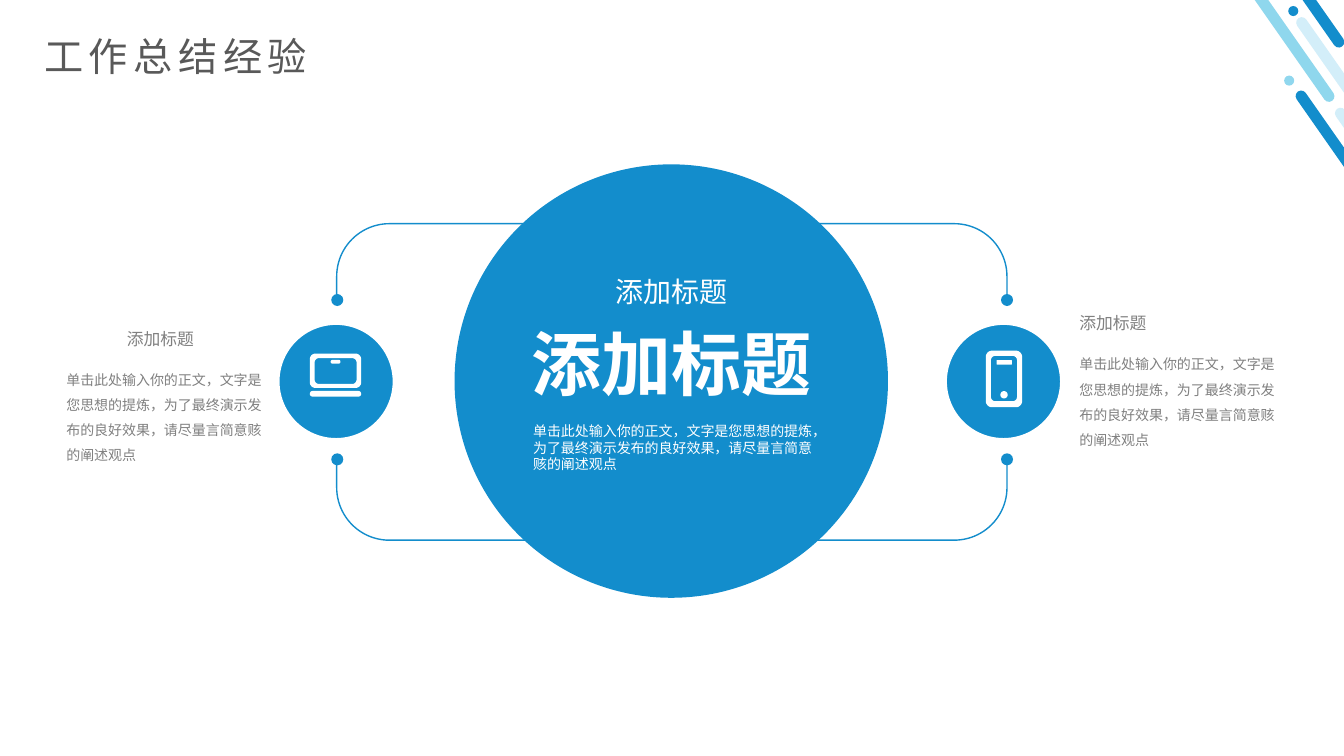
import math
import pptx
import pptx.util
import pptx.dml.color
import pptx.enum.shapes
import pptx.enum.text

Pt = pptx.util.Pt
KIND = pptx.enum.shapes.MSO_SHAPE
ALIGN = pptx.enum.text.PP_ALIGN
FIT = pptx.enum.text.MSO_AUTO_SIZE

FONT = "Noto Sans CJK SC"
BLUE, SKY, PALE, WHITE = "138DCC", "90D7EE", "D3EEF9", "FFFFFF"
DARK, GRAY = "595959", "808080"

HEAD = "添加标题"
BODY = "单击此处输入你的正文，文字是您思想的提炼，为了最终演示发布的良好效果，请尽量言简意赅的阐述观点"

BARS = [
    (968.4, 51.1, 157.7, BLUE),
    (996.5, 63.4, 157.7, PALE),
    (890.6, -108.7, 198.7, "8FD7ED"),
    (980.6, -5, 198.7, PALE),
    (909.4, -110.2, 157.7, BLUE),
]
SPOTS = [(917.3, 54, SKY), (920.2, 4.3, BLUE)]

HUB = (324.7, 117.4, 309.6, 309.6)
FRAME = (240.5, 159.8, 478.8, 226.1)
BADGES = [192.2, 668.9]
DOTS = [(x, y) for x in (236.6, 715) for y in (210, 323.8)]

TEXTS = [
    ("工作总结经验", (24.5, 19.4, 937.4, 41), dict(size=28, color=DARK, gap=4)),
    (BODY, (40.3, 255.6, 161.3, 55.4), dict(lead=1.5, grow=False)),
    (HEAD, (83.5, 231.1, 113, 21.8), dict(size=12)),
    (BODY, (763.9, 244.6, 161.3, 55.4), dict(lead=1.5, grow=False)),
    (HEAD, (763.9, 219.9, 113, 21.8), dict(size=12)),
    (HEAD, (368.6, 192.2, 222.5, 31.5),
     dict(size=20, color=WHITE, align=ALIGN.CENTER)),
    (HEAD, (368.6, 225.4, 222.5, 67.5),
     dict(size=50, color=WHITE, align=ALIGN.CENTER, bold=True)),
    (BODY, (373.7, 298.1, 214.6, 55.4), dict(color=WHITE, grow=False)),
]

LAPTOP = [
    (221.3, 252.6, 36.7, 24.5, 4),
    (224.7, 255.8, 30, 18.5, 3.2),
    (221.3, 279.3, 36.7, 4, 2),
    (236.2, 257, 7, 2.8, 1.4),
]
PHONE = [
    (704.2, 250.5, 25.9, 40.4, 4.4),
    (707.8, 254.2, 18.7, 32.4, 3.2),
    (711.9, 257.2, 10.9, 3.3, 0.4),
    (714.6, 279.4, 5.2, 5.2, 2.6),
]

deck = pptx.Presentation()
deck.slide_width, deck.slide_height = Pt(960), Pt(540)
page = deck.slides.add_slide(deck.slide_layouts[6])


def tint(code):
    return pptx.dml.color.RGBColor.from_string(code)


def paint(part, fill=None, line=None, width=1):
    part.shadow.inherit = False
    if fill:
        part.fill.solid()
        part.fill.fore_color.rgb = tint(fill)
    else:
        part.fill.background()
    if line:
        part.line.color.rgb = tint(line)
        part.line.width = Pt(width)
    else:
        part.line.fill.background()


def shape(kind, box, **look):
    part = page.shapes.add_shape(kind, *map(Pt, box))
    paint(part, **look)
    return part


def write(text, box, size=10, color=GRAY, bold=False, align=ALIGN.LEFT,
          lead=None, gap=0, grow=True):
    frame = page.shapes.add_textbox(*map(Pt, box)).text_frame
    frame.word_wrap = True
    frame.auto_size = FIT.SHAPE_TO_FIT_TEXT if grow else FIT.NONE
    para = frame.paragraphs[0]
    para.alignment = align
    if lead:
        para.line_spacing = lead
    run = para.add_run()
    run.text = text
    font = run.font
    font.name, font.size, font.bold = FONT, Pt(size), bold
    font.color.rgb = tint(color)
    props = run._r.get_or_add_rPr()
    if gap:
        props.set("spc", str(gap * 100))
    east = props.makeelement(pptx.oxml.ns.qn("a:ea"), {"typeface": FONT})
    props.find(pptx.oxml.ns.qn("a:latin")).addnext(east)


def outline(left, top, wide, high, curve, steps=8):
    spots = []
    for turn in range(4):
        x = left + (wide - curve if turn in (0, 3) else curve)
        y = top + (high - curve if turn in (0, 1) else curve)
        for step in range(steps + 1):
            arc = math.pi / 2 * (turn + step / steps)
            spots.append((100 * (x + curve * math.cos(arc)),
                          100 * (y + curve * math.sin(arc))))
    return spots


def icon(parts):
    rings = [outline(*part) for part in parts]
    pen = page.shapes.build_freeform(*rings[0][0], scale=Pt(1) / 100)
    for rank, ring in enumerate(rings):
        if rank:
            pen.move_to(*ring[0])
        pen.add_line_segments(ring[1:], close=True)
    paint(pen.convert_to_shape(), fill=WHITE)


for left, top, high, color in BARS:
    bar = shape(KIND.ROUNDED_RECTANGLE, (left, top, 7.9, high), fill=color)
    bar.adjustments[0] = 0.5
    bar.rotation = 325
for left, top, color in SPOTS:
    shape(KIND.OVAL, (left, top, 7.2, 7.2), fill=color)

shape(KIND.OVAL, HUB, fill=BLUE)
shape(KIND.ROUNDED_RECTANGLE, FRAME, line=BLUE)
for left in BADGES:
    shape(KIND.OVAL, (left, 224.6, 95.8, 95.8), fill=BLUE, line=WHITE, width=15)
for left, top in DOTS:
    shape(KIND.OVAL, (left, top, 8.6, 8.6), fill=BLUE)

for text, box, form in TEXTS:
    write(text, box, **form)
for parts in (LAPTOP, PHONE):
    icon(parts)

deck.save("out.pptx")
